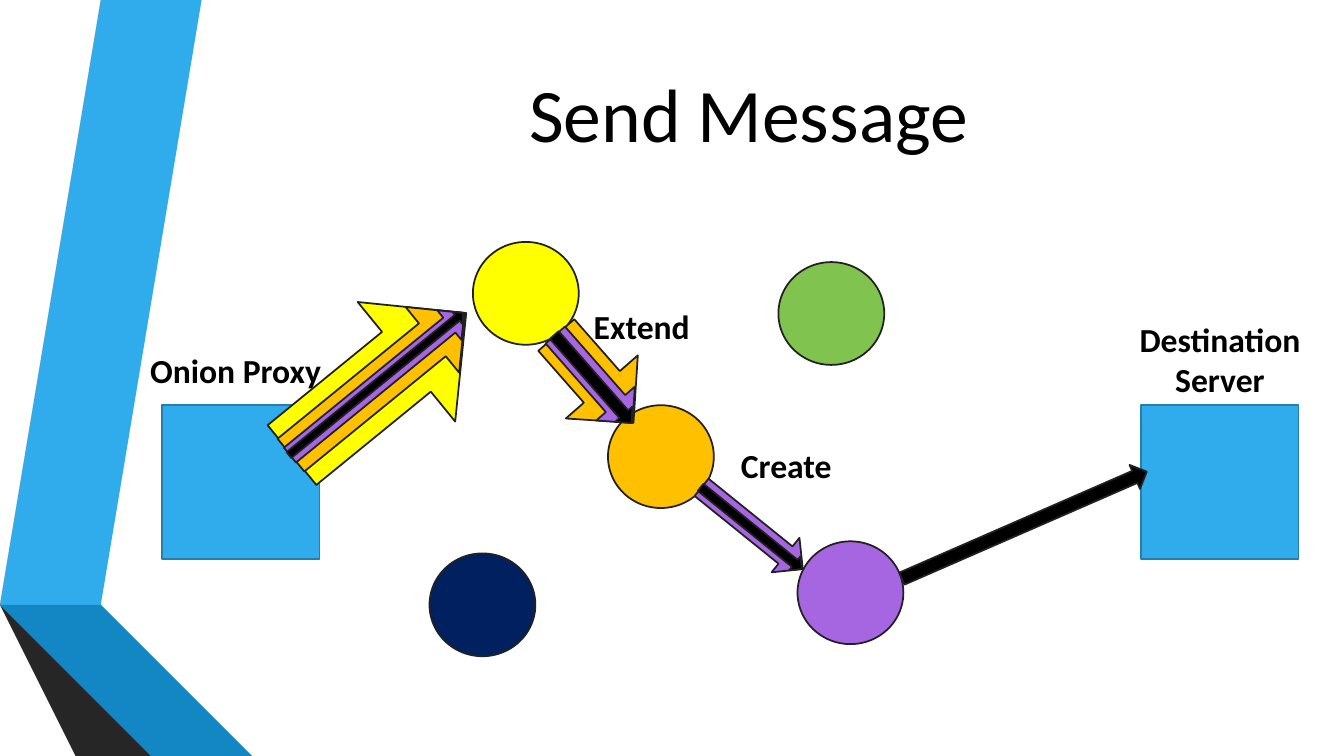
from pptx import Presentation
from pptx.dml.color import RGBColor
from pptx.enum.shapes import MSO_SHAPE as Preset
from pptx.enum.text import MSO_ANCHOR as Anchor, PP_ALIGN as Align
from pptx.util import Inches, Pt

COLORS = {
    "blue": "30ACEC", "blue_edge": "247FAF", "blue_shade": "1287C3", "blue_dark": "0C5A82",
    "gray": "595959", "gray_shade": "404040", "gray_dark": "262626",
    "yellow": "FFFF00", "orange": "FFC000", "purple": "A666E1", "green": "80C34F",
    "navy": "002060", "black": "000000", "edge": "212121",
}

# Folded ribbons on the left: color, outline points
RIBBONS = [
    ("blue", [(0.5, 5.78), (0.77, 5.83), (1.73, 0), (1.45, 0)]),
    ("gray", [(1.39, 0), (1.11, 0), (0.16, 5.73), (0.44, 5.77)]),
    ("gray_dark", [(0.16, 5.73), (1.45, 7.5), (1.51, 7.5)]),
    ("blue_dark", [(0.5, 5.79), (2.08, 7.5), (2.14, 7.5)]),
    ("blue_shade", [(0.5, 5.79), (2.14, 7.5), (2.83, 7.5), (0.77, 5.83), (0.5, 5.78)]),
    ("gray_shade", [(2.02, 7.5), (0.48, 5.83), (0.43, 5.78), (0.44, 5.77),
                    (0.16, 5.73), (1.51, 7.5)]),
]

# Text: wording, left, top, width, height, size, bold, alignment
TITLE = ("Send Message", 2.29, 0.15, 10.27, 1.92, 54, False, Align.CENTER)
LABELS = [
    ("Onion Proxy", 1.39, 3.42, 2.38, 0.5, 24, True, Align.LEFT),
    ("Destination Server", 10.91, 3.11, 2.38, 0.91, 24, True, Align.CENTER),
    ("Extend", 5.79, 2.99, 1.32, 0.5, 24, True, Align.LEFT),
    ("Create", 7.25, 4.36, 1.32, 0.5, 24, True, Align.LEFT),
]

# Hosts and relays: color, left, top
HOST_SIZE = (1.56, 1.53)
HOSTS = [("blue", 1.61, 4.02), ("blue", 11.32, 4.02)]
RELAY_SIZE = (1.05, 1.02)
RELAYS = [
    ("yellow", 4.69, 2.4), ("orange", 6.03, 4.02), ("green", 7.72, 2.6),
    ("purple", 7.91, 5.37), ("navy", 4.26, 5.49),
]

# Hops: center x, center y, length, rotation, layers from outside in (color, height)
HOPS = [
    (3.76, 3.81, 2.23, 320.8,
     [("yellow", 1.53), ("orange", 0.84), ("purple", 0.38), ("black", 0.15)]),
    (5.9, 3.76, 1.16, 48.7, [("orange", 0.95), ("purple", 0.51), ("black", 0.23)]),
    (7.46, 5.24, 1.29, 38.9, [("purple", 0.44), ("black", 0.18)]),
    (10.16, 5.21, 2.65, 336.4, [("black", 0.26)]),
]
LAYER_SHIFT = 0.01  # each inner layer sits slightly further left


def rgb(name):
    return RGBColor.from_string(COLORS[name])


def paint(shape, fill, edge=None):
    shape.shadow.inherit = False
    shape.fill.solid()
    shape.fill.fore_color.rgb = rgb(fill)
    if edge:
        shape.line.color.rgb = rgb(edge)
        shape.line.width = Pt(1.25)
    else:
        shape.line.fill.background()


def add_preset(slide, preset, box, fill, edge="edge"):
    shape = slide.shapes.add_shape(preset, *map(Inches, box))
    paint(shape, fill, edge)
    return shape


def add_text(slide, wording, left, top, width, height, size, bold, alignment, anchor=Anchor.TOP):
    text_box = slide.shapes.add_textbox(*map(Inches, (left, top, width, height)))
    text_frame = text_box.text_frame
    text_frame.word_wrap = True
    text_frame.vertical_anchor = anchor
    text_frame.text = wording
    paragraph = text_frame.paragraphs[0]
    paragraph.alignment = alignment
    font = paragraph.runs[0].font
    font.name, font.size, font.bold = "Calibri", Pt(size), bold
    font.color.rgb = rgb("black")


def main():
    presentation = Presentation()
    presentation.slide_width, presentation.slide_height = Inches(13.33), Inches(7.5)
    slide = presentation.slides.add_slide(presentation.slide_layouts[6])

    # Ribbons
    for color, points in RIBBONS:
        builder = slide.shapes.build_freeform(*points[0], scale=Inches(1))
        builder.add_line_segments(points[1:], close=True)
        paint(builder.convert_to_shape(), color)

    # Hosts and relays
    for color, left, top in HOSTS:
        add_preset(slide, Preset.RECTANGLE, (left, top, *HOST_SIZE), color, "blue_edge")
    for color, left, top in RELAYS:
        add_preset(slide, Preset.OVAL, (left, top, *RELAY_SIZE), color)

    # Title and labels
    add_text(slide, *TITLE, anchor=Anchor.MIDDLE)
    for label in LABELS:
        add_text(slide, *label)

    # Nested arrows, one layer of encryption removed at each hop
    for center_x, center_y, length, rotation, layers in HOPS:
        for index, (color, height) in enumerate(layers):
            left = center_x - length / 2 - index * LAYER_SHIFT
            box = (left, center_y - height / 2, length, height)
            add_preset(slide, Preset.RIGHT_ARROW, box, color).rotation = rotation

    presentation.save("out.pptx")


if __name__ == "__main__":
    main()
